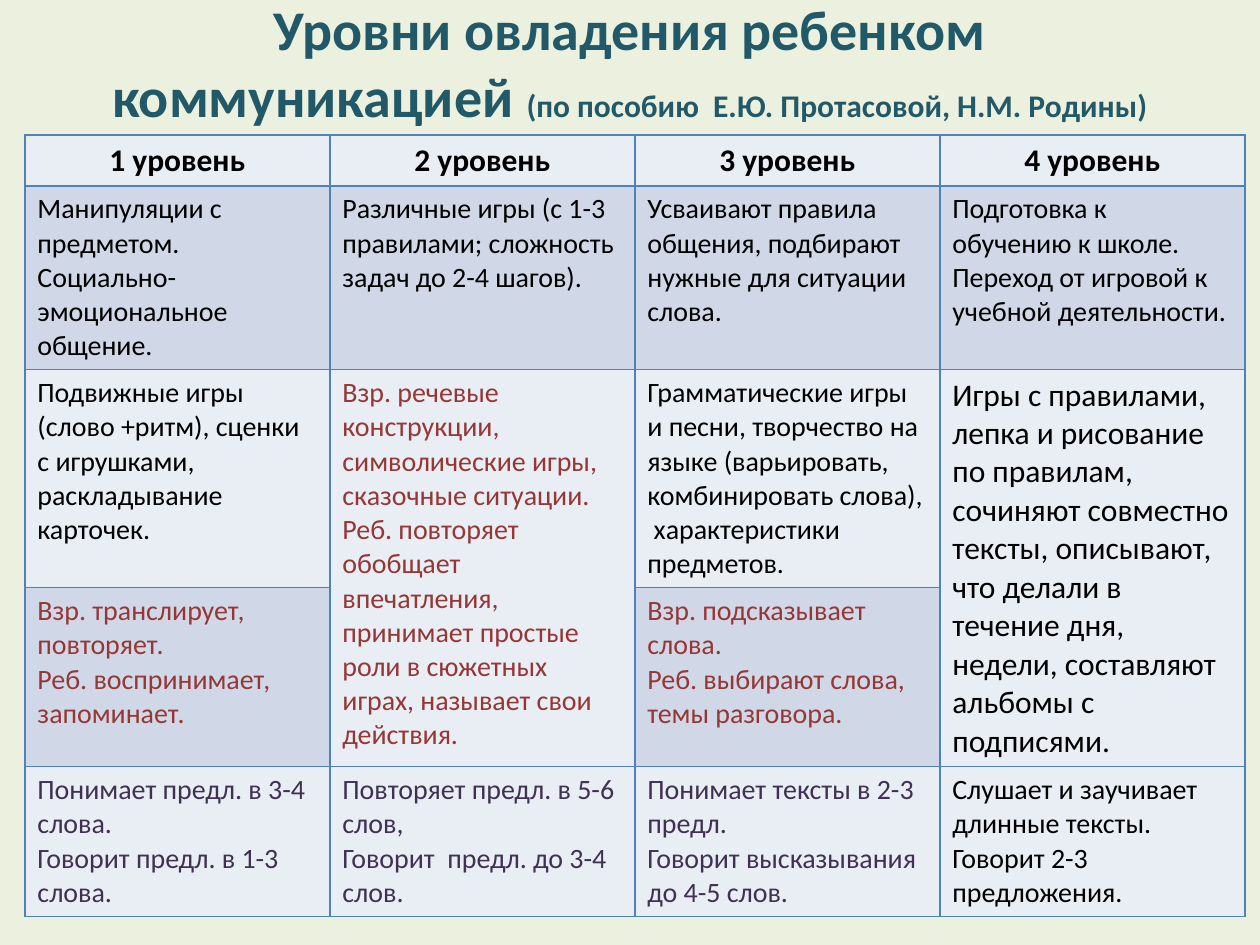
from dataclasses import dataclass

from lxml.etree import SubElement
from pptx import Presentation
from pptx.dml.color import RGBColor as Color
from pptx.enum.text import MSO_ANCHOR as Anchor, PP_ALIGN as Align
from pptx.oxml.ns import qn
from pptx.slide import Slide
from pptx.table import Table, _Cell as TableCell
from pptx.text.text import Font
from pptx.util import Pt


@dataclass(frozen=True)
class Theme:
    font: str = "Calibri"
    background: str = "EBF1DE"
    title: str = "215968"
    text: str = "000000"
    roles: str = "953735"
    speech: str = "403152"
    border: str = "4F81BD"
    light: str = "E9EDF4"
    dark: str = "D0D8E8"
    title_size: int = 32
    large_size: int = 18
    body_size: int = 16
    border_width: int = 1


THEME = Theme()


@dataclass(frozen=True)
class Entry:
    text: str
    color: str = THEME.text
    size: int = THEME.body_size
    bold: bool = False
    align: Align = Align.LEFT
    row_span: int = 1


@dataclass(frozen=True)
class Row:
    height: float
    fill: str
    entries: tuple[Entry | None, ...]


def header(number: int) -> Entry:
    return Entry(f"{number} уровень", size=THEME.large_size, bold=True, align=Align.CENTER)


def roles(text: str, row_span: int = 1) -> Entry:
    return Entry(text, THEME.roles, row_span=row_span)


def speech(text: str) -> Entry:
    return Entry(text, THEME.speech)


TITLE = (
    ("Уровни овладения ребенком коммуникацией ", THEME.title_size),
    ("(по пособию  Е.Ю. Протасовой, Н.М. Родины)", THEME.large_size),
)

ROWS = (
    Row(29.1, THEME.light, tuple(header(number) for number in range(1, 5))),
    Row(105.1, THEME.dark, (
        Entry("Манипуляции с предметом.\nСоциально-эмоциональное общение."),
        Entry("Различные игры (с 1-3 правилами; сложность задач до 2-4 шагов)."),
        Entry("Усваивают правила общения, подбирают нужные для ситуации слова."),
        Entry("Подготовка к обучению к школе. Переход от игровой к учебной деятельности."),
    )),
    Row(124.6, THEME.light, (
        Entry("Подвижные игры (слово +ритм), сценки с игрушками,  раскладывание карточек."),
        roles("Взр. речевые конструкции, символические игры, сказочные ситуации.\n"
              "Реб. повторяет обобщает впечатления, принимает простые роли в сюжетных играх, "
              "называет свои действия.", row_span=2),
        Entry("Грамматические игры и песни, творчество на языке (варьировать, "
              "комбинировать слова),  характеристики предметов."),
        Entry("Игры с правилами, лепка и рисование по правилам, сочиняют совместно тексты, "
              "описывают, что делали в течение дня, недели, составляют альбомы с подписями.",
              size=THEME.large_size, row_span=2),
    )),
    Row(102.3, THEME.dark, (
        roles("Взр. транслирует, повторяет.\nРеб. воспринимает, запоминает."),
        None,
        roles("Взр. подсказывает слова.\nРеб. выбирают слова, темы разговора."),
        None,
    )),
    Row(85.7, THEME.light, (
        speech("Понимает предл. в 3-4 слова.\nГоворит предл. в 1-3 слова."),
        speech("Повторяет предл. в 5-6 слов,\nГоворит  предл. до 3-4 слов."),
        speech("Понимает тексты в 2-3 предл.\nГоворит высказывания до 4-5 слов."),
        Entry("Слушает и заучивает  длинные тексты.\nГоворит 2-3 предложения."),
    )),
)


def style_font(font: Font, color: str, bold: bool) -> None:
    font.name = THEME.font
    font.bold = bold
    font.color.rgb = Color.from_string(color)


def add_title(slide: Slide) -> None:
    frame = slide.shapes.add_textbox(Pt(36), Pt(21.6), Pt(648), Pt(27.4)).text_frame
    frame.word_wrap = True
    frame.vertical_anchor = Anchor.MIDDLE
    paragraph = frame.paragraphs[0]
    paragraph.alignment = Align.CENTER
    style_font(paragraph.font, THEME.title, True)
    for text, size in TITLE:
        run = paragraph.add_run()
        run.text = text
        run.font.size = Pt(size)


def set_cell(cell: TableCell, fill: str) -> None:
    properties = cell._tc.get_or_add_tcPr()
    for side in ("a:lnL", "a:lnR", "a:lnT", "a:lnB"):
        line = SubElement(properties, qn(side), w=str(Pt(THEME.border_width)))
        SubElement(SubElement(line, qn("a:solidFill")), qn("a:srgbClr"), val=THEME.border)
    cell.fill.solid()
    cell.fill.fore_color.rgb = Color.from_string(fill)


def write_entry(cell: TableCell, entry: Entry) -> None:
    cell.text_frame.text = entry.text
    for paragraph in cell.text_frame.paragraphs:
        paragraph.alignment = entry.align
        paragraph.font.size = Pt(entry.size)
        style_font(paragraph.font, entry.color, entry.bold)


def fill_row(table: Table, index: int, row: Row) -> None:
    table.rows[index].height = Pt(row.height)
    for column, entry in enumerate(row.entries):
        cell = table.cell(index, column)
        set_cell(cell, row.fill)
        if entry is None:
            continue
        write_entry(cell, entry)
        if entry.row_span > 1:
            cell.merge(table.cell(index + entry.row_span - 1, column))


def add_levels_table(slide: Slide) -> None:
    height = sum(row.height for row in ROWS)
    table = slide.shapes.add_table(
        len(ROWS), len(ROWS[0].entries), Pt(14.2), Pt(77.1), Pt(697.2), Pt(height)).table
    table.first_row = False
    table.horz_banding = False
    for index, row in enumerate(ROWS):
        fill_row(table, index, row)


def main() -> None:
    """Build the slide on the levels of a child's communication."""
    presentation = Presentation()
    presentation.slide_width, presentation.slide_height = Pt(720), Pt(540)
    slide = presentation.slides.add_slide(presentation.slide_layouts[6])
    slide.background.fill.solid()
    slide.background.fill.fore_color.rgb = Color.from_string(THEME.background)
    add_title(slide)
    add_levels_table(slide)
    presentation.save("out.pptx")


if __name__ == "__main__":
    main()
